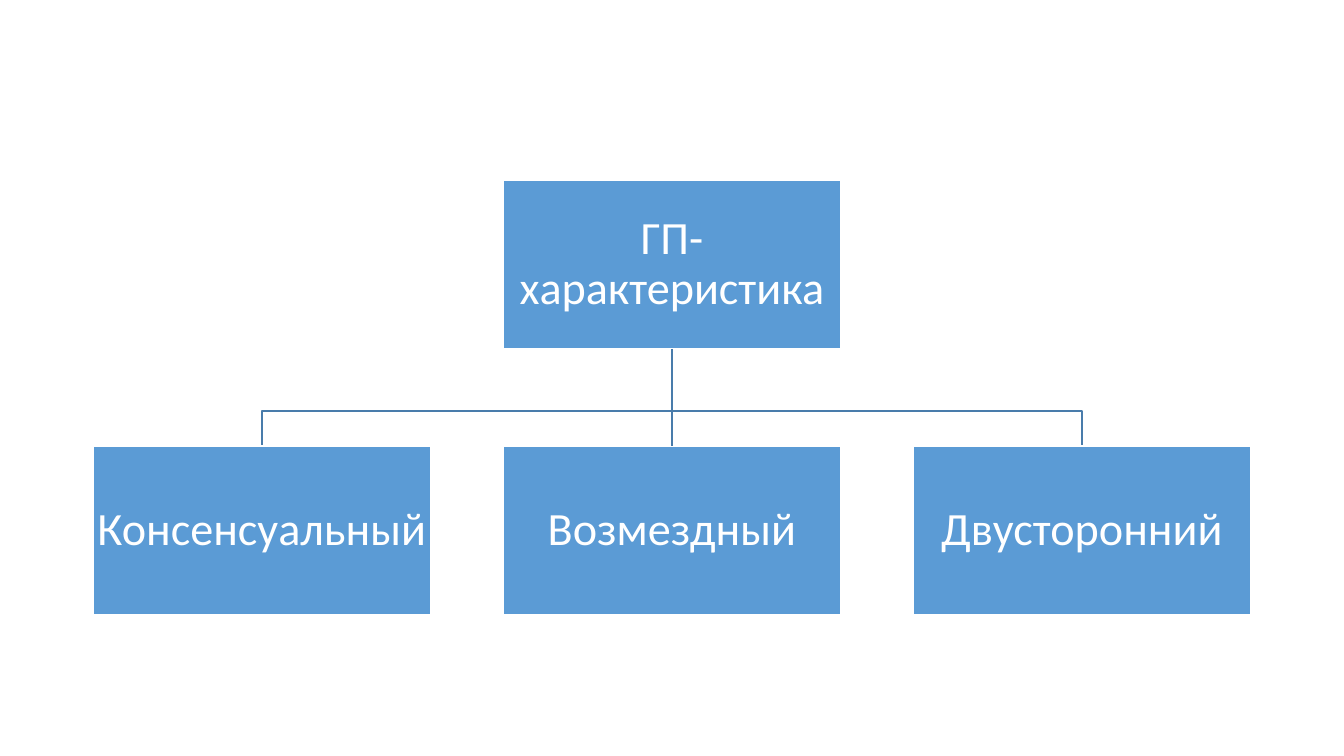
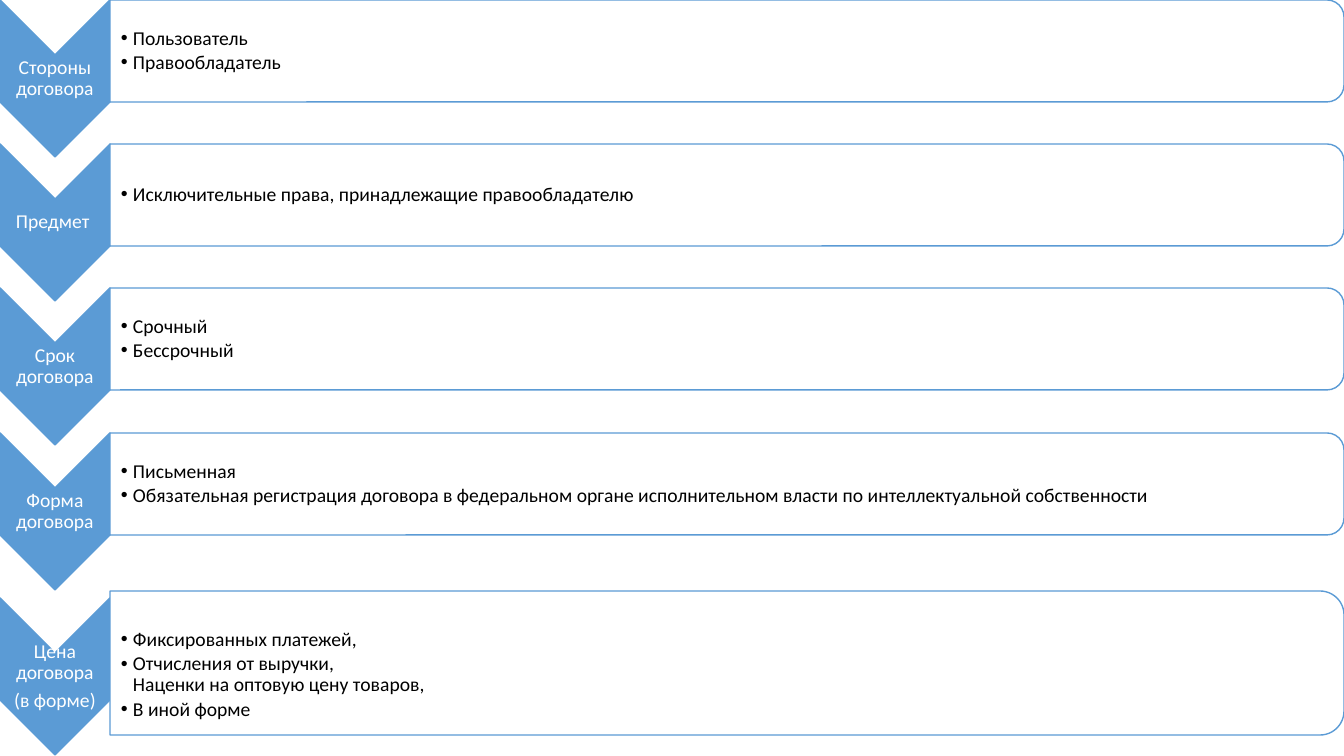
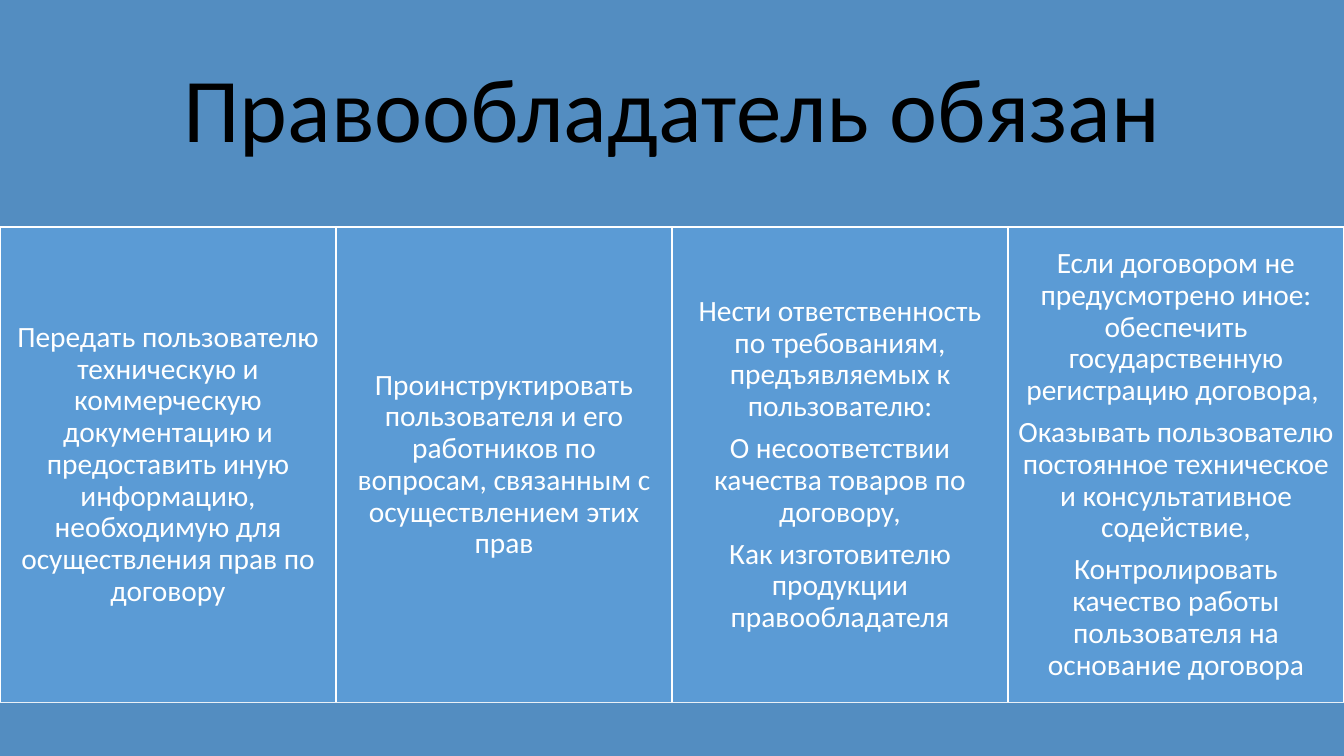
from lxml import etree
from pptx import Presentation, util as u
from pptx.dml.color import RGBColor
from pptx.enum import shapes, text
from pptx.oxml import ns

SCALE = 12192000 / 1344
SLIDE_WIDTH, SLIDE_HEIGHT = 1344, 756
FONT = "Calibri"
COLOURS = {
    "blue": "5B9BD5",
    "band": "538DC1",
    "link": "497CAB",
    "white": "FFFFFF",
    "black": "000000",
}
TITLE_ONLY, BLANK = 5, 6

TERMS = [
    ("Стороны договора", ["Пользователь", "Правообладатель"]),
    ("Предмет ", ["Исключительные права, принадлежащие правообладателю"]),
    ("Срок договора", ["Срочный", "Бессрочный"]),
    ("Форма договора", [
        "Письменная",
        "Обязательная регистрация договора в федеральном органе "
        "исполнительном власти по интеллектуальной собственности",
    ]),
]
PRICE_LABEL = ["Цена договора", "(в форме)"]
PRICE_FORMS = [
    "Фиксированных платежей,",
    "Отчисления от выручки,\vНаценки на оптовую цену товаров,",
    "В иной форме",
]
DUTIES = [
    ["Передать пользователю техническую и коммерческую документацию и предоставить "
     "иную информацию, необходимую для осуществления прав по договору"],
    ["Проинструктировать пользователя и его работников по вопросам, связанным "
     "с осуществлением этих прав"],
    ["Нести ответственность по требованиям, предъявляемых к пользователю:",
     "О несоответствии качества товаров по договору,",
     "Как изготовителю продукции правообладателя"],
    ["Если договором не предусмотрено иное: обеспечить государственную "
     "регистрацию договора, ",
     "Оказывать пользователю постоянное техническое и консультативное содействие,",
     "Контролировать качество работы пользователя на основание договора"],
]


def px(length):
    return u.Emu(round(length * SCALE))


def colour(name):
    return RGBColor.from_string(COLOURS[name])


def add_bullet(para, indent):
    properties = para._p.get_or_add_pPr()
    properties.set("marL", str(px(indent)))
    properties.set("indent", str(-px(indent)))
    etree.SubElement(properties, ns.qn("a:buFont"), typeface="Arial")
    etree.SubElement(properties, ns.qn("a:buChar"), char="•")


def write_text(box, paragraphs, size, ink="white", inset=1, left_inset=None, bullets=False):
    frame = box.text_frame
    frame.word_wrap = True
    frame.auto_size = text.MSO_AUTO_SIZE.NONE
    frame.vertical_anchor = text.MSO_ANCHOR.MIDDLE
    frame.margin_left = px(inset if left_inset is None else left_inset)
    frame.margin_right = frame.margin_top = frame.margin_bottom = px(inset)
    for index, words in enumerate(paragraphs):
        para = frame.add_paragraph() if index else frame.paragraphs[0]
        para.text = words
        para.alignment = text.PP_ALIGN.LEFT if bullets else text.PP_ALIGN.CENTER
        para.line_spacing = 0.9
        para.space_before = u.Pt(0)
        para.space_after = u.Pt(size * (0.15 if bullets else 0.35))
        if bullets:
            add_bullet(para, 12)
        for span in para.runs:
            span.font.name = FONT
            span.font.size = u.Pt(size)
            span.font.color.rgb = colour(ink)


def add_text(page, paragraphs, left, top, width, height, **style):
    box = page.shapes.add_textbox(px(left), px(top), px(width), px(height))
    write_text(box, paragraphs, **style)


def set_line(shape, name):
    shape.line.color.rgb = colour(name)
    shape.line.width = u.Pt(1)


def add_shape(page, kind, left, top, width, height, fill="blue", line=None):
    shape = page.shapes.add_shape(kind, px(left), px(top), px(width), px(height))
    shape.shadow.inherit = False
    shape.fill.solid()
    shape.fill.fore_color.rgb = colour(fill)
    if line:
        set_line(shape, line)
    else:
        shape.line.fill.background()
    return shape


def add_box(page, paragraphs, left, top, width, height, **style):
    box = add_shape(page, shapes.MSO_SHAPE.RECTANGLE, left, top, width, height, line="white")
    write_text(box, paragraphs, **style)
    return box


def add_turned(page, kind, left, top, width, height, **look):
    shift = (width - height) / 2
    shape = add_shape(page, kind, left + shift, top - shift, height, width, **look)
    shape.rotation = 90


def add_straight_link(page, upper, lower):
    link = page.shapes.add_connector(shapes.MSO_CONNECTOR.STRAIGHT, 0, 0, 0, 0)
    link.begin_connect(upper, 2)
    link.end_connect(lower, 0)
    set_line(link, "link")
    etree.SubElement(link._element.spPr, ns.qn("a:effectLst"))


def add_bent_link(page, start_x, start_y, bend_y, end_x, end_y):
    builder = page.shapes.build_freeform(start_x, start_y, scale=SCALE)
    builder.add_line_segments(
        [(start_x, bend_y), (end_x, bend_y), (end_x, end_y)], close=False)
    link = builder.convert_to_shape()
    link.shadow.inherit = False
    link.fill.background()
    set_line(link, "link")


def add_term(page, label, points, top, panel_top, panel_height, skip=0):
    arrow_width, arrow_height = 110, 157
    panel_width = SLIDE_WIDTH - arrow_width
    add_turned(page, shapes.MSO_SHAPE.CHEVRON, 0, top, arrow_width, arrow_height, line="blue")
    add_text(page, label, 0, top + 55, arrow_width, 47, size=14)
    add_turned(page, shapes.MSO_SHAPE.ROUND_2_SAME_RECTANGLE, arrow_width, panel_top,
               panel_width, panel_height, fill="white", line="blue")
    add_text(page, points, arrow_width, panel_top + 5 + skip, panel_width - 5,
             panel_height - 10 - skip, size=14, ink="black", left_inset=11, bullets=True)


def build_features(deck):
    page = deck.slides.add_slide(deck.slide_layouts[BLANK])
    width, height, step = 338, 169, 410
    root_left, root_top, child_top, bend_y = 503, 180, 446, 411
    middle = root_left + width // 2
    for side in (1, -1):
        add_bent_link(page, middle, root_top + height, bend_y, middle + side * step, child_top)
    root = add_box(page, ["ГП-характеристика"], root_left, root_top, width, height,
                   size=33, inset=2)
    children = [
        add_box(page, [name], root_left + place * step, child_top, width, height,
                size=33, inset=2)
        for place, name in enumerate(["Консенсуальный", "Возмездный", "Двусторонний"], -1)
    ]
    add_straight_link(page, root, children[1])


def build_terms(deck):
    page = deck.slides.add_slide(deck.slide_layouts[BLANK])
    for row, (label, points) in enumerate(TERMS):
        top = 433 * row // 3
        add_term(page, [label], points, top, top, 102)
    add_term(page, PRICE_LABEL, PRICE_FORMS, 598, 591, 144, skip=24)


def build_duties(deck):
    page = deck.slides.add_slide(deck.slide_layouts[TITLE_ONLY])
    top, bottom = 227, 703
    title = page.shapes.title
    title.left, title.top = px(0), px(0)
    title.width, title.height = px(SLIDE_WIDTH), px(top)
    title.fill.solid()
    title.fill.fore_color.rgb = colour("band")
    write_text(title, ["Правообладатель обязан"], size=65, ink="black", inset=27)
    width = SLIDE_WIDTH // len(DUTIES)
    for column, duty in enumerate(DUTIES):
        add_box(page, duty, column * width, top, width, bottom - top, size=21, inset=9)
    add_shape(page, shapes.MSO_SHAPE.RECTANGLE, 0, bottom, SLIDE_WIDTH,
              SLIDE_HEIGHT - bottom, fill="band")


def main():
    deck = Presentation()
    deck.slide_width, deck.slide_height = px(SLIDE_WIDTH), px(SLIDE_HEIGHT)
    build_features(deck)
    build_terms(deck)
    build_duties(deck)
    deck.save("out.pptx")


if __name__ == "__main__":
    main()
